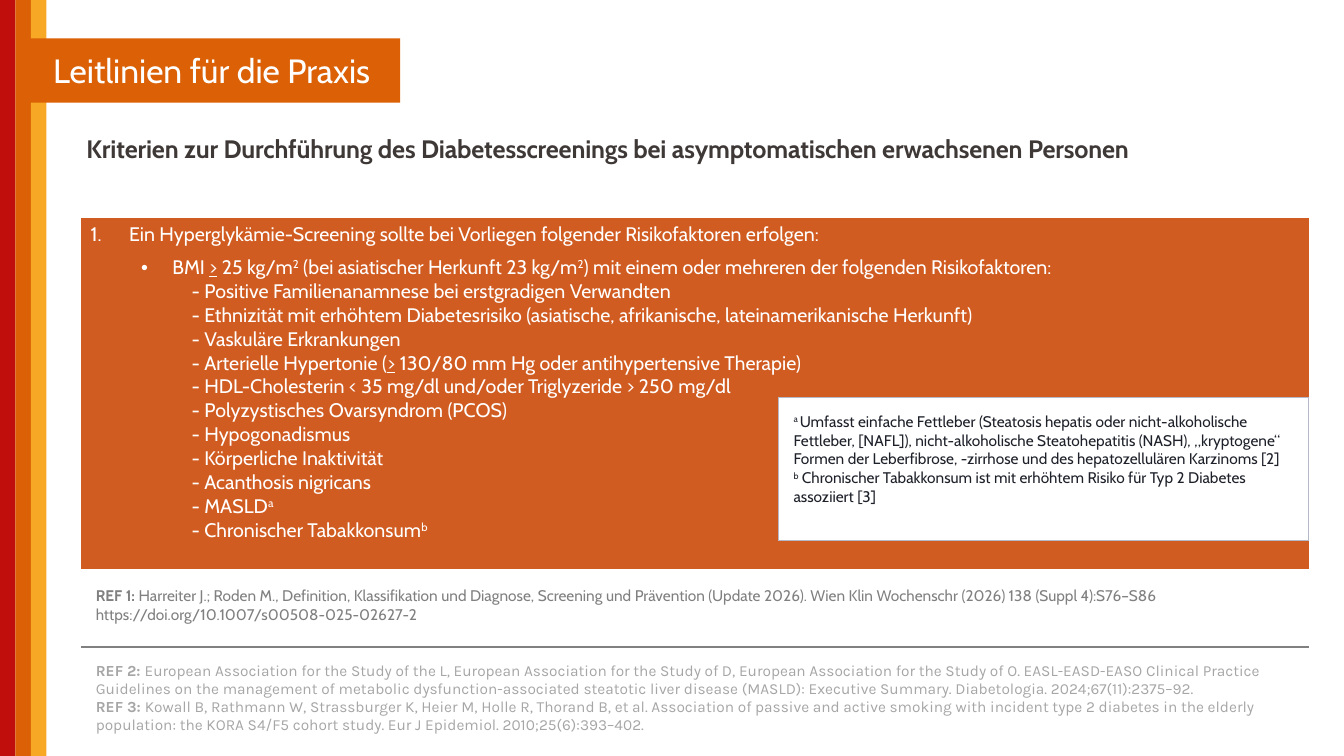
from dataclasses import dataclass

from lxml.etree import SubElement
from pptx import Presentation
from pptx.dml.color import RGBColor
from pptx.enum.shapes import MSO_SHAPE
from pptx.enum.text import MSO_ANCHOR, PP_ALIGN
from pptx.oxml.ns import qn
from pptx.util import Inches, Pt


@dataclass(frozen=True)
class Theme:
    red: str = "C00E0D"
    orange: str = "DB6006"
    amber: str = "F7A824"
    panel: str = "D15C21"
    white: str = "FFFFFF"
    heading: str = "3E3837"
    note: str = "1E212A"
    note_border: str = "B4B8C7"
    grey: str = "808080"
    light_grey: str = "A6A6A6"
    sans: str = "Cabin"
    reference_font: str = "Karla"
    title_size: int = 24
    heading_size: int = 18
    body_size: int = 14
    small_size: int = 11


THEME = Theme()
SUP = {"baseline": "30000"}
UNDERLINE = {"u": "sng"}
BOLD = {"b": "1"}

RISK_FACTORS = [
    ["- Positive Familienanamnese bei erstgradigen Verwandten"],
    ["- Ethnizität mit erhöhtem Diabetesrisiko (asiatische, afrikanische, lateinamerikanische Herkunft)"],
    ["- Vaskuläre Erkrankungen"],
    ["- Arterielle Hypertonie (", (">", UNDERLINE), " 130/80 mm Hg oder antihypertensive Therapie)"],
    ["- HDL-Cholesterin < 35 mg/dl und/oder Triglyzeride > 250 mg/dl"],
    ["- Polyzystisches Ovarsyndrom (PCOS)"],
    ["- Hypogonadismus"],
    ["- Körperliche Inaktivität"],
    ["- Acanthosis nigricans"],
    ["- MASLD", ("a", SUP)],
    ["- Chronischer Tabakkonsum", ("b", SUP)],
]
BMI = ["BMI ", (">", UNDERLINE), " 25 kg/m", ("2", SUP), " (bei asiatischer Herkunft 23 kg/m", ("2", SUP),
       ") mit einem oder mehreren der folgenden Risikofaktoren:"]
NOTES = [
    [("a ", SUP), "Umfasst einfache Fettleber (Steatosis hepatis oder nicht-alkoholische Fettleber, [NAFL]), "
     "nicht-alkoholische Steatohepatitis (NASH), „kryptogene“ Formen der Leberfibrose, -zirrhose und des "
     "hepatozellulären Karzinoms [2]"],
    [("b", SUP), " Chronischer Tabakkonsum ist mit erhöhtem Risiko für Typ 2 Diabetes assoziiert [3]"],
]
GUIDELINE = [
    [("REF 1: ", BOLD), "Harreiter J.; Roden M., Definition, Klassifikation und Diagnose, Screening und "
     "Prävention (Update 2026). Wien Klin Wochenschr (2026) 138 (Suppl 4):S76–S86"],
    ["https://doi.org/10.1007/s00508-025-02627-2"],
]
REFERENCES = [
    [("REF 2: ", BOLD), "European Association for the Study of the L, European Association for the Study of D, "
     "European Association for the Study of O. EASL-EASD-EASO Clinical Practice Guidelines on the management of "
     "metabolic dysfunction-associated steatotic liver disease (MASLD): Executive Summary. Diabetologia. "
     "2024;67(11):2375–92."],
    [("REF 3: ", BOLD), "Kowall B, Rathmann W, Strassburger K, Heier M, Holle R, Thorand B, et al. Association of "
     "passive and active smoking with incident type 2 diabetes in the elderly population: the KORA S4/F5 cohort "
     "study. Eur J Epidemiol. 2010;25(6):393–402."],
]


def write(frame, runs, size, color, font=THEME.sans, align=PP_ALIGN.LEFT, level=0,
          margin=0, indent=0, bullet=None, before=None, spacing=None):
    paragraph = frame.paragraphs[0]
    if paragraph.runs:
        paragraph = frame.add_paragraph()
    paragraph.alignment, paragraph.level = align, level
    properties = paragraph._p.get_or_add_pPr()
    properties.set("marL", str(Inches(margin)))
    properties.set("indent", str(Inches(indent)))
    if bullet == "1.":
        SubElement(properties, qn("a:buAutoNum"), type="arabicPeriod")
    elif bullet:
        SubElement(properties, qn("a:buFont"), typeface="Arial")
        SubElement(properties, qn("a:buChar"), char=bullet)
    else:
        SubElement(properties, qn("a:buNone"))
    if before:
        paragraph.space_before = Pt(before)
    if spacing:
        paragraph.line_spacing = spacing
    for part in runs:
        text, marks = (part, {}) if isinstance(part, str) else part
        run = paragraph.add_run()
        run.text = text
        run.font.size, run.font.name = Pt(size), font
        run.font.color.rgb = RGBColor.from_string(color)
        for key, value in marks.items():
            run._r.get_or_add_rPr().set(key, value)


def add_bar(slide, left, top, width, height, color):
    bar = slide.shapes.add_shape(MSO_SHAPE.RECTANGLE, Inches(left), Inches(top), Inches(width), Inches(height))
    bar.shadow.inherit = False
    bar.fill.solid()
    bar.fill.fore_color.rgb = RGBColor.from_string(color)
    bar.line.fill.background()
    return bar


def set_borders(cell, borders):
    properties = cell._tc.get_or_add_tcPr()
    for side in "LRTB":
        color, width = borders.get(side, (None, 0))
        line = SubElement(properties, qn(f"a:ln{side}"), w=str(Pt(width)))
        if color:
            solid = SubElement(line, qn("a:solidFill"))
            SubElement(solid, qn("a:srgbClr"), val=color)
        else:
            SubElement(line, qn("a:noFill"))


def add_panel(slide, left, top, width, height, fill=None, borders=None, inset=None):
    table = slide.shapes.add_table(1, 1, Inches(left), Inches(top), Inches(width), Inches(height)).table
    table.first_row = table.horz_banding = False
    cell = table.cell(0, 0)
    set_borders(cell, borders or {})
    if fill:
        cell.fill.solid()
        cell.fill.fore_color.rgb = RGBColor.from_string(fill)
    else:
        cell.fill.background()
    if inset:
        cell.margin_left = cell.margin_right = cell.margin_top = cell.margin_bottom = Inches(inset)
    return cell.text_frame


def add_small_print(slide, paragraphs, left, top, width, height, color, font=THEME.sans, **panel):
    frame = add_panel(slide, left, top, width, height, inset=0.15, **panel)
    for runs in paragraphs:
        write(frame, runs, THEME.small_size, color, font=font)


def add_title(slide):
    stripe = 0.46 / 3
    for index, color in enumerate((THEME.red, THEME.orange, THEME.amber)):
        add_bar(slide, index * stripe, 0, stripe, 7.5, color)
    frame = add_bar(slide, 0.23, 0.38, 3.74, 0.64, THEME.orange).text_frame
    frame.vertical_anchor = MSO_ANCHOR.MIDDLE
    write(frame, ["Leitlinien für die Praxis"], THEME.title_size, THEME.white, align=PP_ALIGN.CENTER)


def add_heading(slide):
    frame = slide.shapes.add_textbox(Inches(0.76), Inches(1.31), Inches(12.2), Inches(0.48)).text_frame
    frame.word_wrap = True
    heading = "Kriterien zur Durchführung des Diabetesscreenings bei asymptomatischen erwachsenen Personen"
    write(frame, [(heading, {**BOLD, "spc": "-10"})], THEME.heading_size, THEME.heading, spacing=0.9)


def add_criteria(slide):
    frame = add_panel(slide, 0.8, 2.16, 12.19, 3.49, fill=THEME.panel,
                      borders=dict.fromkeys("LRTB", (THEME.white, 1)))
    size, color = THEME.body_size, THEME.white
    write(frame, ["Ein Hyperglykämie-Screening sollte bei Vorliegen folgender Risikofaktoren erfolgen:"],
          size, color, margin=0.38, indent=-0.38, bullet="1.")
    write(frame, BMI, size, color, level=1, margin=0.81, indent=-0.31, bullet="•", before=6.5)
    for factor in RISK_FACTORS:
        write(frame, factor, size, color, level=2, margin=1)


def main():
    deck = Presentation()
    deck.slide_width, deck.slide_height = Inches(13.33), Inches(7.5)
    slide = deck.slides.add_slide(deck.slide_layouts[6])
    add_title(slide)
    add_criteria(slide)
    add_small_print(slide, REFERENCES, 0.8, 6.42, 12.18, 1.03, THEME.light_grey,
                    font=THEME.reference_font, borders={"T": (THEME.grey, 1.5)})
    add_heading(slide)
    add_small_print(slide, NOTES, 7.72, 3.94, 5.26, 1.42, THEME.note, fill=THEME.white,
                    borders=dict.fromkeys("LRTB", (THEME.note_border, 1)))
    add_small_print(slide, GUIDELINE, 0.8, 5.67, 12.25, 0.67, THEME.grey)
    deck.save("out.pptx")


if __name__ == "__main__":
    main()
